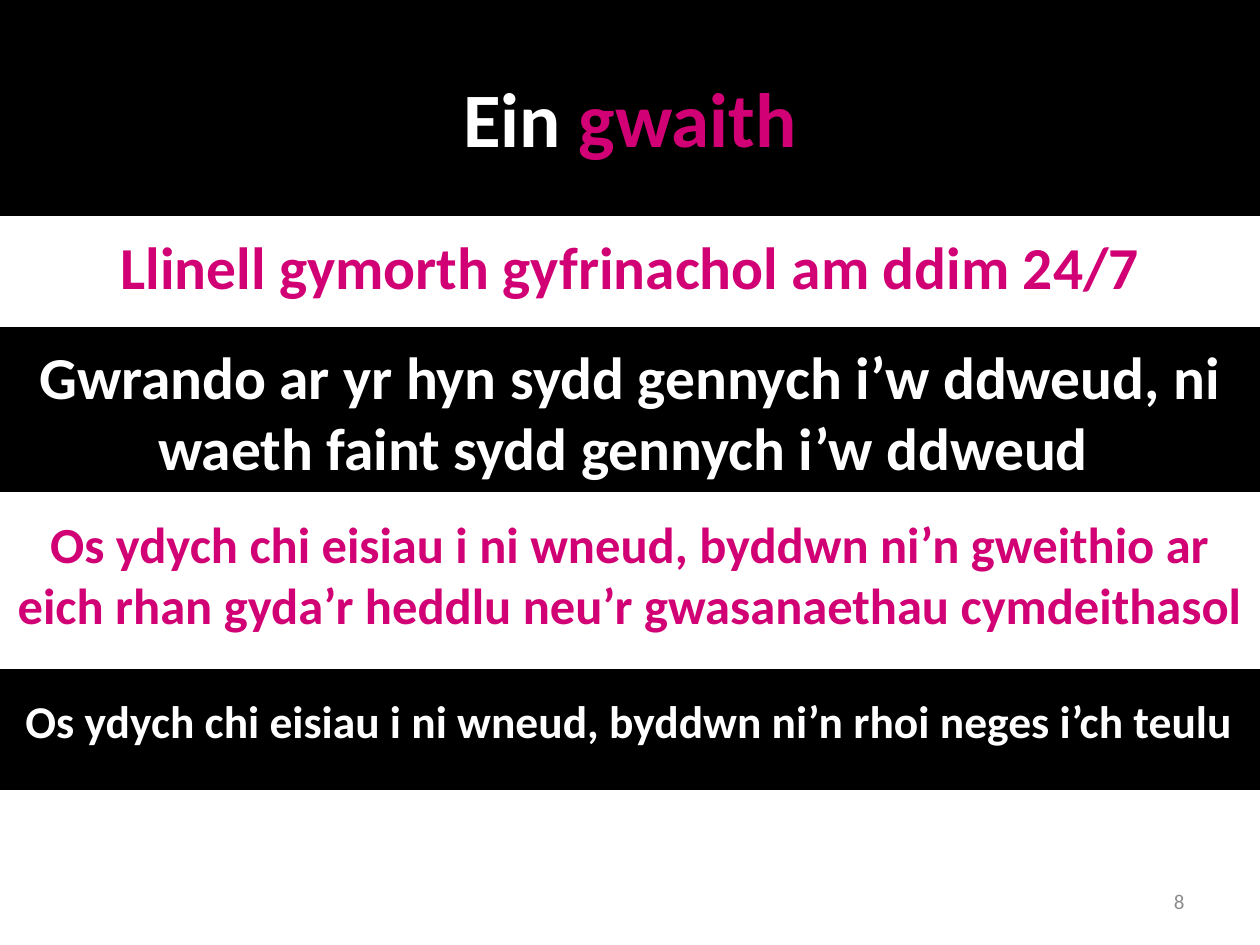
import pptx
import pptx.util
import pptx.dml.color
import pptx.enum.shapes
import pptx.enum.text

Inches = pptx.util.Inches
ALIGN = pptx.enum.text.PP_ALIGN
ANCHOR = pptx.enum.text.MSO_ANCHOR

BLACK = pptx.dml.color.RGBColor(0x00, 0x00, 0x00)
WHITE = pptx.dml.color.RGBColor(0xFF, 0xFF, 0xFF)
PINK = pptx.dml.color.RGBColor(0xD1, 0x00, 0x74)
GREY = pptx.dml.color.RGBColor(0x8C, 0x8C, 0x8C)

SLIDE_WIDTH, SLIDE_HEIGHT = 10, 7.5
MARGIN = 0.5

BANDS = [(0, 1.7), (2.61, 1.28), (5.32, 0.94)]

TITLE = [("Ein ", WHITE), ("gwaith", PINK)]
SERVICES = [
    ("Llinell gymorth gyfrinachol am ddim 24/7", PINK, 34, 1.78, 0.74),
    ("Gwrando ar yr hyn sydd gennych i’w ddweud, ni waeth faint sydd gennych i’w ddweud ",
     WHITE, 34, 2.65, 1.24),
    ("Os ydych chi eisiau i ni wneud, byddwn ni’n gweithio ar eich rhan gyda’r heddlu "
     "neu’r gwasanaethau cymdeithasol", PINK, 28.9, 4.02, 1.25),
    ("Os ydych chi eisiau i ni wneud, byddwn ni’n rhoi neges i’ch teulu", WHITE, 26, 5.45, 1.31),
]
PAGE_NUMBER = [("8", GREY)]


def add_band(slide, top, height):
    band = slide.shapes.add_shape(
        pptx.enum.shapes.MSO_SHAPE.RECTANGLE,
        Inches(0), Inches(top), Inches(SLIDE_WIDTH), Inches(height))
    band.shadow.inherit = False
    band.fill.solid()
    band.fill.fore_color.rgb = BLACK
    band.line.color.rgb = BLACK
    band.line.width = pptx.util.Pt(2)


def add_text(slide, place, pieces, size, bold=True, align=ALIGN.CENTER, anchor=ANCHOR.TOP):
    frame = slide.shapes.add_textbox(*map(Inches, place)).text_frame
    frame.word_wrap = True
    frame.vertical_anchor = anchor
    paragraph = frame.paragraphs[0]
    paragraph.alignment = align
    font_format = {"name": "Calibri", "size": pptx.util.Pt(size), "bold": bold}
    for words, colour in pieces:
        run = paragraph.add_run()
        run.text = words
        for attribute, value in font_format.items():
            setattr(run.font, attribute, value)
        run.font.color.rgb = colour


def main():
    deck = pptx.Presentation()
    deck.slide_width, deck.slide_height = Inches(SLIDE_WIDTH), Inches(SLIDE_HEIGHT)
    slide = deck.slides.add_slide(deck.slide_layouts[6])

    for top, height in BANDS:
        add_band(slide, top, height)

    add_text(slide, (MARGIN, 0.3, SLIDE_WIDTH - 2 * MARGIN, 1.25), TITLE, 44,
             anchor=ANCHOR.MIDDLE)
    for words, colour, size, top, height in SERVICES:
        add_text(slide, (0, top, SLIDE_WIDTH, height), [(words, colour)], size)

    number_width = 2.33
    add_text(slide, (SLIDE_WIDTH - MARGIN - number_width, 6.95, number_width, 0.4),
             PAGE_NUMBER, 12, bold=False, align=ALIGN.RIGHT, anchor=ANCHOR.MIDDLE)

    deck.save("out.pptx")


if __name__ == "__main__":
    main()
